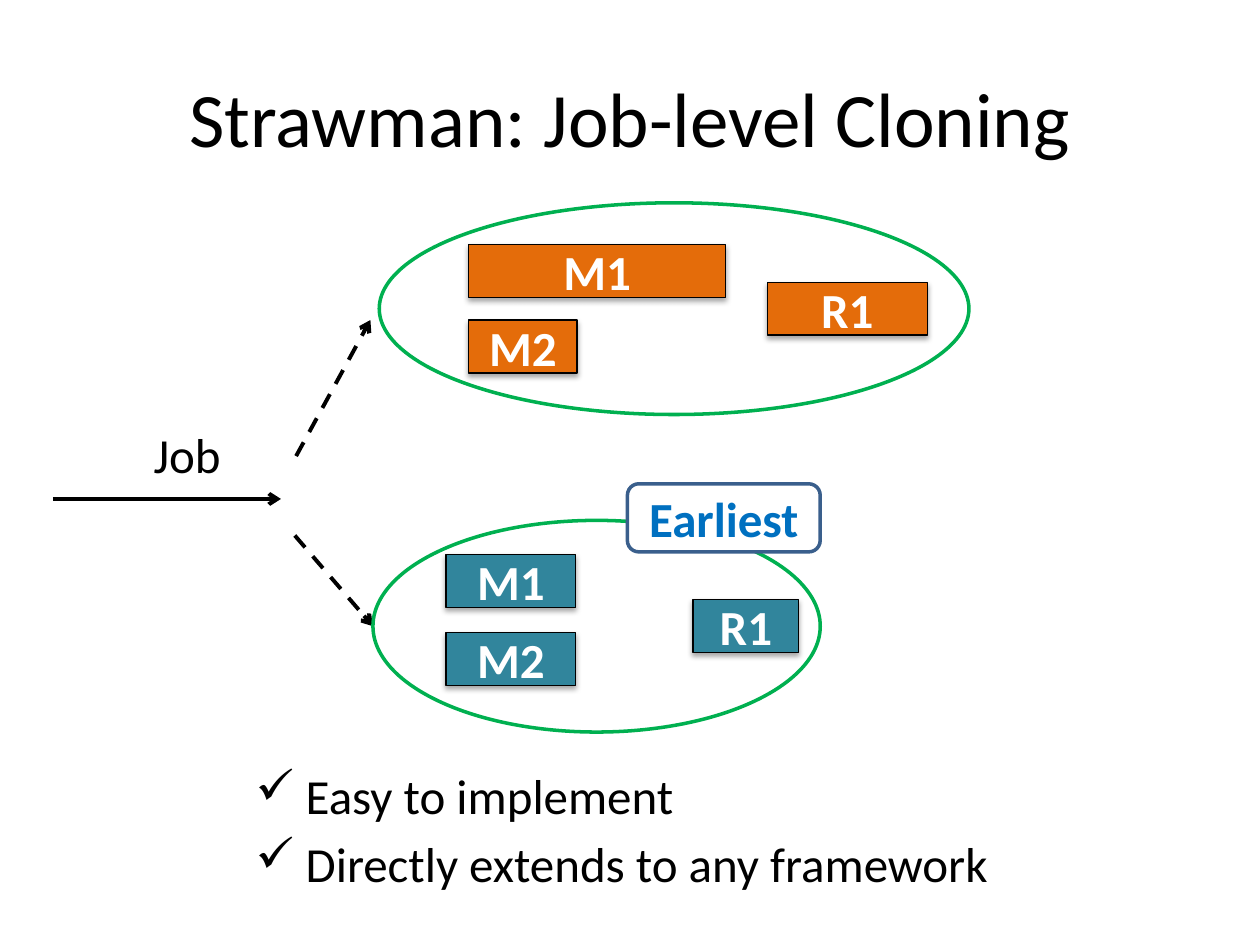
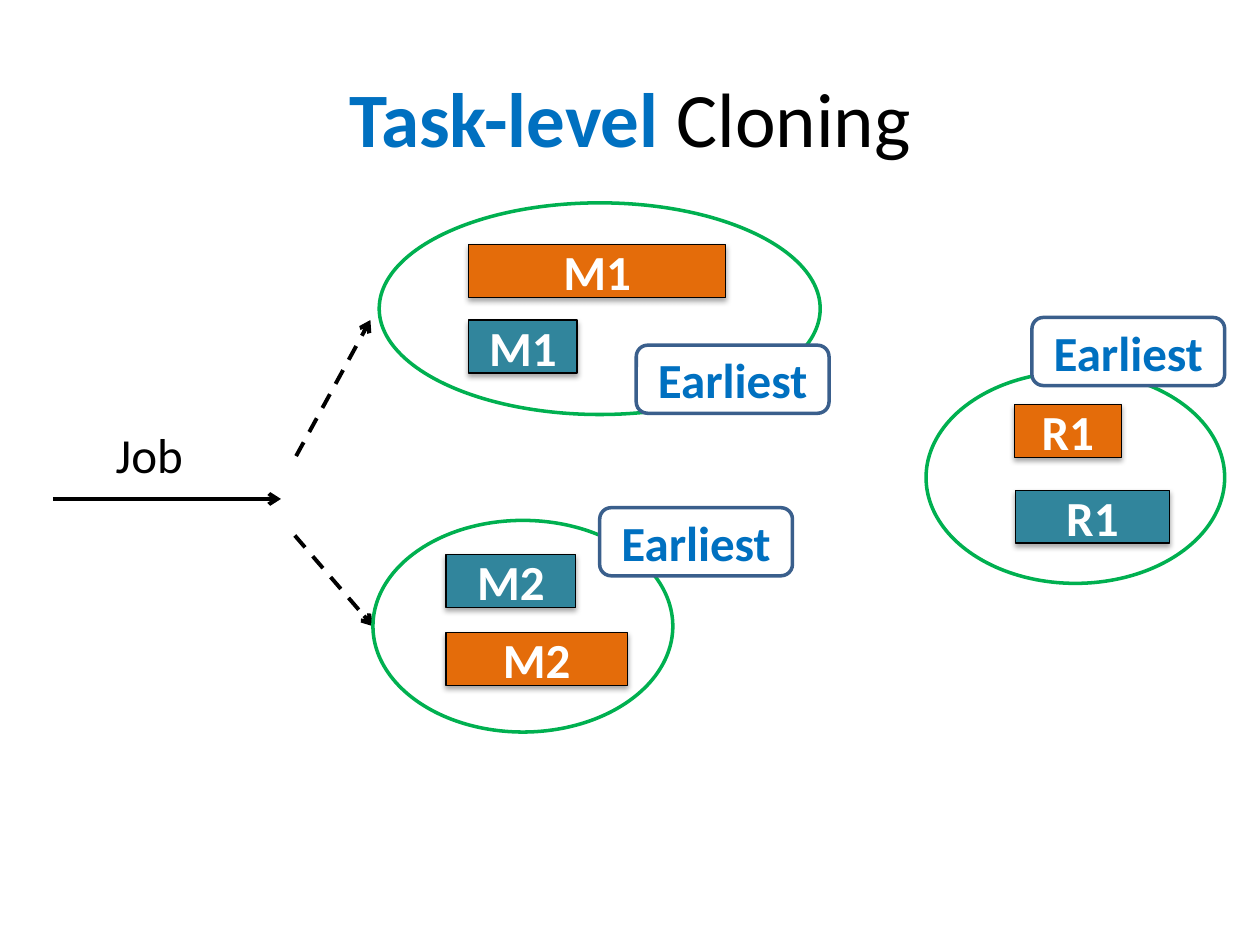
from dataclasses import dataclass

from lxml import etree
from pptx import Presentation
from pptx.dml.color import RGBColor
from pptx.enum.dml import MSO_LINE
from pptx.enum.shapes import MSO_CONNECTOR, MSO_SHAPE
from pptx.enum.text import MSO_ANCHOR, PP_ALIGN
from pptx.oxml.ns import qn
from pptx.util import Inches, Pt

OVAL, RECT, ROUNDED = MSO_SHAPE.OVAL, MSO_SHAPE.RECTANGLE, MSO_SHAPE.ROUNDED_RECTANGLE
STRAIGHT, DASH = MSO_CONNECTOR.STRAIGHT, MSO_LINE.DASH
LEFT, CENTER, MIDDLE = PP_ALIGN.LEFT, PP_ALIGN.CENTER, MSO_ANCHOR.MIDDLE
TITLE_ONLY = 5
COLUMNS, ROWS = 10, 7.5


@dataclass(frozen=True)
class Theme:
    font: str = "Calibri"
    title_size: float = 44
    text_size: float = 28
    ink: str = "000000"
    paper: str = "FFFFFF"
    accent: str = "0070C0"
    group: str = "00B050"
    badge_edge: str = "3A5F8C"
    first_clone: str = "E46C0A"
    second_clone: str = "31859C"
    arrow_width: float = 2.25
    outline_width: float = 2
    task_width: float = 0.75


THEME = Theme()
ORANGE, TEAL = THEME.first_clone, THEME.second_clone

# Heights that every group, task and badge shares, in rows
GROUP_HEIGHT, TASK_HEIGHT = 1.68, 0.42
BADGE_SIZE = (1.53, 0.54)


def add_xml(parent, tag, **attributes):
    return etree.SubElement(parent, qn(tag), attributes)


class Deck:
    def __init__(self, theme):
        self.theme = theme
        self.presentation = Presentation()
        self.presentation.slide_width = Inches(10)
        self.presentation.slide_height = Inches(7.5)
        self.slide = None

    def x(self, columns):
        return round(self.presentation.slide_width * columns / COLUMNS)

    def y(self, rows):
        return round(self.presentation.slide_height * rows / ROWS)

    def box(self, left, top, width, height):
        return self.x(left), self.y(top), self.x(width), self.y(height)

    def add_words(self, paragraph, text, color, size=None, bold=False):
        run = paragraph.add_run()
        run.text = text
        formats = {"name": self.theme.font, "size": Pt(size or self.theme.text_size), "bold": bold}
        for name, value in formats.items():
            setattr(run.font, name, value)
        run.font.color.rgb = RGBColor.from_string(color)

    def stroke(self, line, color, width):
        line.color.rgb = RGBColor.from_string(color)
        line.width = Pt(width)

    def start(self, *title_parts):
        """Add a slide whose title is made of (text, emphasised) parts."""
        layout = self.presentation.slide_layouts[TITLE_ONLY]
        self.slide = self.presentation.slides.add_slide(layout)
        title = self.slide.shapes.title
        places = zip(("left", "top", "width", "height"), self.box(0.5, 0.3, 9, 1.25))
        for name, value in places:
            setattr(title, name, value)
        title.text_frame.vertical_anchor = MIDDLE
        heading = title.text_frame.paragraphs[0]
        heading.alignment = CENTER
        for text, emphasised in title_parts:
            color = self.theme.accent if emphasised else self.theme.ink
            self.add_words(heading, text, color, self.theme.title_size, emphasised)

    def shape(self, kind, place, edge, width, fill=None):
        shape = self.slide.shapes.add_shape(kind, *self.box(*place))
        shape.shadow.inherit = False
        self.stroke(shape.line, edge, width)
        if fill:
            shape.fill.solid()
            shape.fill.fore_color.rgb = RGBColor.from_string(fill)
        else:
            shape.fill.background()
        return shape

    def caption(self, shape, text, color):
        shape.text_frame.vertical_anchor = MIDDLE
        paragraph = shape.text_frame.paragraphs[0]
        paragraph.alignment = CENTER
        self.add_words(paragraph, text, color, bold=True)

    def group(self, left, top, width):
        self.shape(OVAL, (left, top, width, GROUP_HEIGHT),
                   self.theme.group, self.theme.outline_width)

    def task(self, text, fill, left, top, width):
        task = self.shape(RECT, (left, top, width, TASK_HEIGHT),
                          self.theme.ink, self.theme.task_width, fill)
        self.caption(task, text, self.theme.paper)
        effects = task._element.spPr.find(qn("a:effectLst"))
        shadow = add_xml(effects, "a:outerShdw", blurRad=str(Pt(3.1)), dist=str(Pt(1.8)),
                         dir="5400000", rotWithShape="0")
        add_xml(add_xml(shadow, "a:srgbClr", val=self.theme.ink), "a:alpha", val="35000")

    def badge(self, left, top):
        badge = self.shape(ROUNDED, (left, top, *BADGE_SIZE), self.theme.badge_edge,
                           self.theme.outline_width, self.theme.paper)
        self.caption(badge, "Earliest", self.theme.accent)

    def arrow(self, start, end, dash=None):
        arrow = self.slide.shapes.add_connector(
            STRAIGHT, self.x(start[0]), self.y(start[1]), self.x(end[0]), self.y(end[1]))
        self.stroke(arrow.line, self.theme.ink, self.theme.arrow_width)
        if dash:
            arrow.line.dash_style = dash
        outline = arrow._element.spPr.find(qn("a:ln"))
        add_xml(outline, "a:tailEnd", type="arrow")
        add_xml(arrow._element.spPr, "a:effectLst")

    def text(self, place, lines, bullet=None):
        frame = self.slide.shapes.add_textbox(*self.box(*place)).text_frame
        frame.word_wrap = True
        for index, line in enumerate(lines):
            paragraph = frame.add_paragraph() if index else frame.paragraphs[0]
            paragraph.alignment = LEFT
            if bullet:
                paragraph.space_before = Pt(5)
                properties = paragraph._p.get_or_add_pPr()
                properties.set("marL", str(Inches(0.81)))
                properties.set("indent", str(Inches(-0.31)))
                add_xml(properties, "a:buChar", char=bullet)
            self.add_words(paragraph, line, self.theme.ink)

    def job_flow(self, label_left):
        """Draw the incoming job and its two dashed branches."""
        self.text((label_left, 3.32, 0.78, 0.57), ["Job"])
        self.arrow((0.42, 3.96), (2.23, 3.96))
        self.arrow((2.35, 3.62), (2.94, 2.54), DASH)
        self.arrow((2.34, 4.25), (2.96, 4.97), DASH)

    def diagram(self, label_left, groups, tasks, badges):
        self.job_flow(label_left)
        for draw, rows in ((self.group, groups), (self.task, tasks), (self.badge, badges)):
            for row in rows:
                draw(*row)


def main():
    deck = Deck(THEME)

    # Job-level cloning: each group holds one full clone of the job
    deck.start(("Strawman: Job-level Cloning", False))
    deck.diagram(
        label_left=1.12,
        groups=[(3.01, 1.61, 4.68), (2.96, 4.13, 3.55)],
        tasks=[
            ("M1", ORANGE, 3.72, 1.94, 2.04),
            ("M2", ORANGE, 3.72, 2.54, 0.86),
            ("R1", ORANGE, 6.09, 2.24, 1.27),
            ("M1", TEAL, 3.54, 4.4, 1.03),
            ("M2", TEAL, 3.54, 5.02, 1.03),
            ("R1", TEAL, 5.5, 4.76, 0.84),
        ],
        badges=[(4.98, 3.84)],
    )
    benefits = [" Easy to implement", " Directly extends to any framework"]
    deck.text((1.43, 6.03, 7.85, 1.33), benefits, bullet="✓")

    # Task-level cloning: each group holds the clones of one task
    deck.start(("Task-level", True), (" Cloning", False))
    deck.diagram(
        label_left=0.82,
        groups=[(3.01, 1.61, 3.5), (2.96, 4.13, 2.38), (7.35, 2.95, 2.37)],
        tasks=[
            ("M1", ORANGE, 3.72, 1.94, 2.04),
            ("M1", TEAL, 3.72, 2.54, 0.86),
            ("M2", TEAL, 3.54, 4.4, 1.03),
            ("M2", ORANGE, 3.54, 5.02, 1.44),
            ("R1", ORANGE, 8.05, 3.21, 0.85),
            ("R1", TEAL, 8.06, 3.89, 1.22),
        ],
        badges=[(5.05, 2.74), (4.76, 4.03), (8.19, 2.52)],
    )

    deck.presentation.save("out.pptx")


if __name__ == "__main__":
    main()
